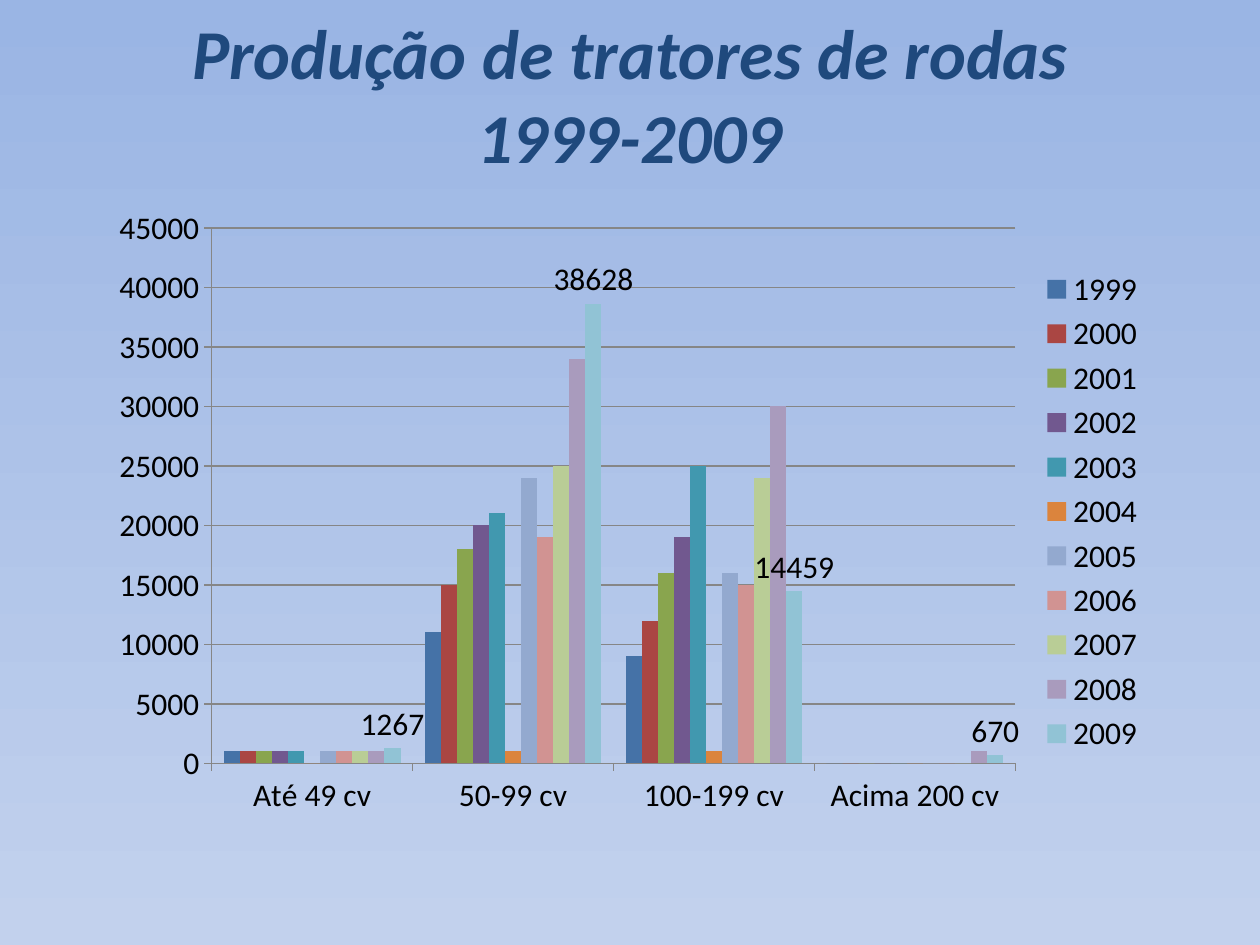
from typing import NamedTuple

from lxml import etree
from pptx import Presentation
from pptx.chart.data import CategoryChartData
from pptx.dml.color import RGBColor
from pptx.enum.chart import XL_CHART_TYPE, XL_LABEL_POSITION, XL_LEGEND_POSITION, XL_TICK_MARK
from pptx.enum.text import MSO_ANCHOR, PP_ALIGN
from pptx.util import Inches, Pt

COLUMNS = XL_CHART_TYPE.COLUMN_CLUSTERED
OUTSIDE_END = XL_LABEL_POSITION.OUTSIDE_END
LEGEND_RIGHT = XL_LEGEND_POSITION.RIGHT
TICK_OUTSIDE = XL_TICK_MARK.OUTSIDE
MIDDLE = MSO_ANCHOR.MIDDLE
CENTER = PP_ALIGN.CENTER

FONT = "Calibri"
BLACK, NAVY, GREY = "000000", "1F497D", "868686"
SKY_TOP, SKY_BOTTOM = "9AB5E4", "C2D1ED"


class Frame(NamedTuple):
    left: float
    top: float
    width: float
    height: float


class Year(NamedTuple):
    name: str
    color: str
    tractors: tuple[int, ...]


TITLE_FRAME = Frame(0.73, 0.12, 8.54, 1.25)
CHART_FRAME = Frame(0.78, 1.56, 8.41, 5)
PLOT_FRAME = Frame(0.9, 0.25, 6.38, 4.25)  # inside the chart
POWER_CLASSES = ("Até 49 cv", "50-99 cv", "100-199 cv", "Acima 200 cv")
YEARS = (
    Year("1999", "4572A7", (1000, 11000, 9000, 0)),
    Year("2000", "AA4643", (1000, 15000, 12000, 0)),
    Year("2001", "89A54E", (1000, 18000, 16000, 0)),
    Year("2002", "71588F", (1000, 20000, 19000, 0)),
    Year("2003", "4198AF", (1000, 21000, 25000, 0)),
    Year("2004", "DB843D", (0, 1000, 1000, 0)),
    Year("2005", "93A9CF", (1000, 24000, 16000, 0)),
    Year("2006", "D19392", (1000, 19000, 15000, 0)),
    Year("2007", "B9CD96", (1000, 25000, 24000, 0)),
    Year("2008", "A99BBD", (1000, 34000, 30000, 1000)),
    Year("2009", "91C3D5", (1267, 38628, 14459, 670)),
)


def rgb(color: str) -> RGBColor:
    return RGBColor.from_string(color)


def inches(frame: Frame) -> list[int]:
    return [Inches(length) for length in frame]


def style_font(font, size: float, color: str) -> None:
    font.name = FONT
    font.size = Pt(size)
    font.color.rgb = rgb(color)


def style_line(line) -> None:
    line.color.rgb = rgb(GREY)
    line.width = Pt(0.75)


def paint_background(page) -> None:
    fill = page.background.fill
    fill.gradient()
    fill.gradient_angle = 270
    for stop, color in zip(fill.gradient_stops, (SKY_TOP, SKY_BOTTOM)):
        stop.color.rgb = rgb(color)


def add_title(page, text: str) -> None:
    frame = page.shapes.add_textbox(*inches(TITLE_FRAME)).text_frame
    frame.word_wrap = True
    frame.vertical_anchor = MIDDLE
    frame.margin_left = frame.margin_right = frame.margin_top = frame.margin_bottom = 0
    para = frame.paragraphs[0]
    para.text = text
    para.alignment = CENTER
    style_font(para.font, 40, NAVY)
    para.font.bold = para.font.italic = True


def place_plot(chart, plot: Frame, whole: Frame) -> None:
    """Fix the inner plot area, given in inches, as shares of the whole chart."""
    plot_area = chart.plots[0]._element.getparent()
    namespace = etree.QName(plot_area).namespace
    for old in plot_area.findall(f"{{{namespace}}}layout"):
        plot_area.remove(old)
    layout = etree.Element(f"{{{namespace}}}layout")
    manual = etree.SubElement(layout, f"{{{namespace}}}manualLayout")
    settings = (
        ("layoutTarget", "inner"), ("xMode", "edge"), ("yMode", "edge"),
        ("x", plot.left / whole.width), ("y", plot.top / whole.height),
        ("w", plot.width / whole.width), ("h", plot.height / whole.height),
    )
    for tag, value in settings:
        etree.SubElement(manual, f"{{{namespace}}}{tag}").set("val", str(value))
    plot_area.insert(0, layout)


def add_production_chart(page) -> None:
    data = CategoryChartData()
    data.categories = POWER_CLASSES
    for year in YEARS:
        data.add_series(year.name, year.tractors)
    chart = page.shapes.add_chart(COLUMNS, *inches(CHART_FRAME), data).chart
    style_font(chart.font, 18, BLACK)
    chart.has_title = False
    chart.has_legend = True
    chart.legend.position = LEGEND_RIGHT
    chart.legend.include_in_layout = False
    style_font(chart.legend.font, 18, BLACK)

    for axis in (chart.category_axis, chart.value_axis):
        axis.major_tick_mark = TICK_OUTSIDE
        style_line(axis.format.line)
        style_font(axis.tick_labels.font, 18, BLACK)
    scale = chart.value_axis
    scale.minimum_scale, scale.maximum_scale, scale.major_unit = 0, 45000, 5000
    style_line(scale.major_gridlines.format.line)

    plot = chart.plots[0]
    plot.vary_by_categories = False
    plot.gap_width = 150
    plot.overlap = 0
    for series, year in zip(plot.series, YEARS):
        series.format.fill.solid()
        series.format.fill.fore_color.rgb = rgb(year.color)
    labels = plot.series[-1].data_labels
    labels.show_value = True
    labels.position = OUTSIDE_END
    style_font(labels.font, 18, BLACK)
    place_plot(chart, PLOT_FRAME, CHART_FRAME)


def main() -> None:
    deck = Presentation()
    deck.slide_width, deck.slide_height = Inches(10), Inches(7.5)
    page = deck.slides.add_slide(deck.slide_layouts[6])
    paint_background(page)
    add_title(page, "Produção de tratores de rodas\v1999-2009")
    add_production_chart(page)
    deck.save("out.pptx")


if __name__ == "__main__":
    main()
